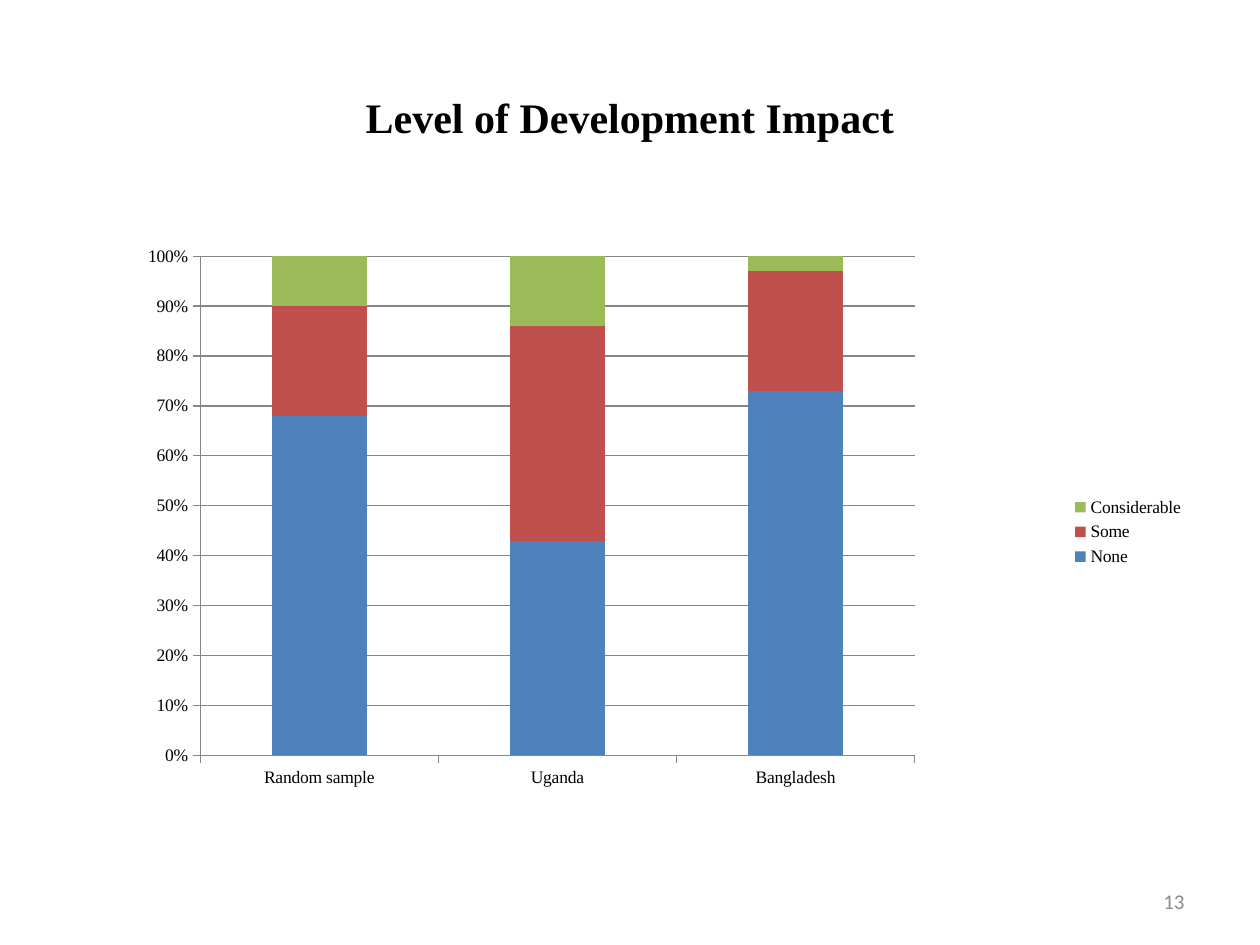
from lxml import etree
from pptx import Presentation
from pptx.chart.data import CategoryChartData
from pptx.dml.color import RGBColor
from pptx.enum.chart import XL_CHART_TYPE, XL_LEGEND_POSITION, XL_TICK_MARK
from pptx.enum.text import MSO_ANCHOR, PP_ALIGN
from pptx.oxml.ns import qn
from pptx.util import Emu, Pt

PX_PER_INCH = 126
BLACK = RGBColor(0x00, 0x00, 0x00)
GREY = RGBColor(0x8C, 0x8C, 0x8C)
AXIS_GREY = RGBColor(0x86, 0x86, 0x86)
BLUE = RGBColor(0x4F, 0x81, 0xBD)
RED = RGBColor(0xC0, 0x50, 0x4D)
GREEN = RGBColor(0x9B, 0xBB, 0x59)
SERIF = "Times New Roman"
SANS = "Calibri"

REGIONS = ["Random sample", "Uganda", "Bangladesh"]
IMPACT_LEVELS = [
    ("None", (68, 43, 73), BLUE),
    ("Some", (22, 43, 24), RED),
    ("Considerable", (10, 14, 3), GREEN),
]
PLOT_AREA = {"x": 0.121, "y": 0.058, "w": 0.63, "h": 0.8}


def px(length):
    return Emu(round(length * 914400 / PX_PER_INCH))


class SlideBuilder:
    def __init__(self, slide):
        self.slide = slide

    def style_font(self, font, name, size, color, bold=False):
        font.name = name
        font.size = Pt(size)
        font.bold = bold
        font.color.rgb = color

    def text(self, words, box, align, name, size, color, bold=False):
        frame = self.slide.shapes.add_textbox(*map(px, box)).text_frame
        frame.word_wrap = True
        frame.vertical_anchor = MSO_ANCHOR.MIDDLE
        frame.text = words
        paragraph = frame.paragraphs[0]
        paragraph.alignment = align
        self.style_font(paragraph.runs[0].font, name, size, color, bold)

    def stacked_chart(self, categories, levels, box, plot_area):
        data = CategoryChartData(number_format="0")
        data.categories = categories
        for level, shares, _ in levels:
            data.add_series(level, shares)
        chart = self.slide.shapes.add_chart(
            XL_CHART_TYPE.COLUMN_STACKED_100, *map(px, box), data).chart
        chart.has_title = False
        self.style_font(chart.font, SERIF, 10, BLACK)

        # Columns
        plot = chart.plots[0]
        plot.vary_by_categories = False
        plot.gap_width = 150
        plot.overlap = 100
        for series, (_, _, color) in zip(plot.series, levels):
            series.format.fill.solid()
            series.format.fill.fore_color.rgb = color

        # Axes and gridlines
        percent = chart.value_axis
        percent.minimum_scale = 0
        percent.maximum_scale = 1
        percent.major_unit = 0.1
        percent.has_major_gridlines = True
        percent.tick_labels.number_format = "0%"
        percent.tick_labels.number_format_is_linked = False
        for axis in (chart.category_axis, percent):
            axis.major_tick_mark = XL_TICK_MARK.OUTSIDE
        for part in (chart.category_axis, percent, percent.major_gridlines):
            part.format.line.color.rgb = AXIS_GREY
            part.format.line.width = Pt(0.75)

        # Legend
        chart.has_legend = True
        chart.legend.position = XL_LEGEND_POSITION.RIGHT
        chart.legend.include_in_layout = False

        self.place_plot(chart, plot_area)

    def place_plot(self, chart, plot_area):
        area = chart.plots[0]._element.getparent()
        for old_layout in area.findall(qn("c:layout")):
            area.remove(old_layout)
        layout = etree.Element(qn("c:layout"))
        area.insert(0, layout)
        manual = etree.SubElement(layout, qn("c:manualLayout"))
        settings = {"layoutTarget": "inner", "xMode": "edge", "yMode": "edge"}
        for tag, value in {**settings, **plot_area}.items():
            etree.SubElement(manual, qn(f"c:{tag}")).set("val", str(value))


def main():
    presentation = Presentation()
    presentation.slide_width = px(1260)
    presentation.slide_height = px(945)
    builder = SlideBuilder(
        presentation.slides.add_slide(presentation.slide_layouts[6]))

    # Title
    builder.text("Level of Development Impact", (63, 38, 1134, 158),
                 PP_ALIGN.CENTER, SERIF, 24, BLACK, bold=True)

    # Impact by region
    builder.stacked_chart(REGIONS, IMPACT_LEVELS, (63, 220, 1134, 624), PLOT_AREA)

    # Page number
    builder.text("13", (903, 876, 294, 50), PP_ALIGN.RIGHT, SANS, 12, GREY)

    presentation.save("out.pptx")


if __name__ == "__main__":
    main()
